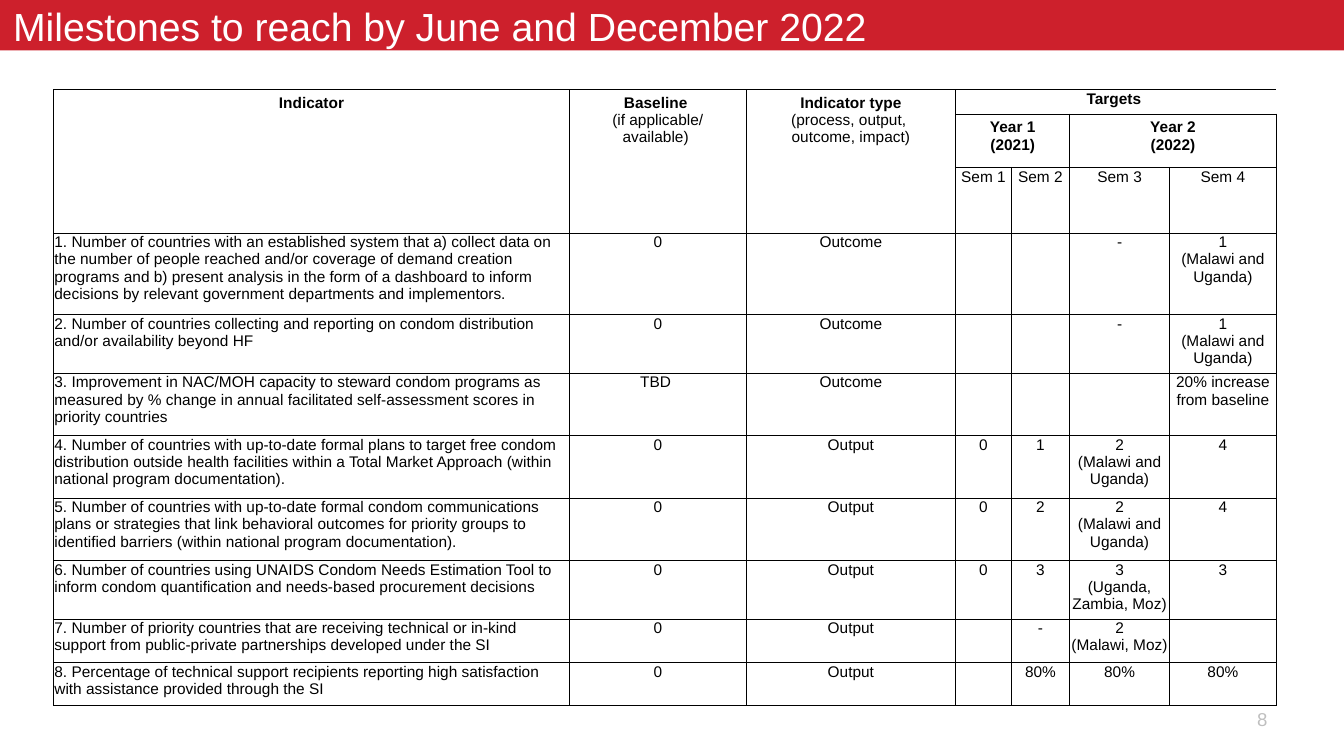
from lxml import etree
from pptx import Presentation
from pptx.dml.color import RGBColor
from pptx.enum import shapes, text
from pptx.oxml import ns
from pptx.util import Inches, Pt

BLACK, WHITE, RED, GREY = "000000", "FFFFFF", "CD202C", "BFBFBF"
LEFT, CENTER, RIGHT = text.PP_ALIGN.LEFT, text.PP_ALIGN.CENTER, text.PP_ALIGN.RIGHT
TIGHT, ROOMY = (0.01, 0.01, 0.01, 0), (0.1, 0.05, 0.1, 0.05)

COLUMN_WIDTHS = [5.12, 1.75, 2.08, 0.55, 0.58, 0.99, 1.06]
ROW_HEIGHTS = [0.24, 0.53, 0.62, 0.81, 0.58, 0.62, 0.62, 0.62, 0.58, 0.43, 0.43]

# Row, column, rows spanned, columns spanned, text, bold lines, insets
# In all texts \n starts a paragraph and \v breaks a line
HEADINGS = [
    (0, 0, 3, 1, "Indicator", 1, ROOMY),
    (0, 1, 3, 1, "Baseline \v(if applicable/\navailable) ", 1, ROOMY),
    (0, 2, 3, 1, "Indicator type\v(process, output, \noutcome, impact)", 1, ROOMY),
    (0, 3, 1, 4, "Targets\u00a0", 1, TIGHT),
    (1, 3, 1, 2, "Year 1\v(2021)", 2, ROOMY),
    (1, 5, 1, 2, "Year 2\v(2022)", 2, ROOMY),
] + [(2, 2 + n, 1, 1, f"Sem {n}", 0, TIGHT) for n in range(1, 5)]

MALAWI_UGANDA = "\n(Malawi and Uganda)"
# Indicator, baseline, type, Sem 1 to Sem 4
INDICATORS = [
    ("Number of countries with an established system that a) collect data on the number of "
     "people reached and/or coverage of demand creation programs and b) present analysis in "
     "the form of a dashboard to inform decisions by relevant government departments and "
     "implementors.", "0", "Outcome", "", "", "-", "1" + MALAWI_UGANDA),
    ("Number of countries collecting and reporting on condom distribution and/or "
     "availability beyond HF", "0", "Outcome", "", "", "-", "1" + MALAWI_UGANDA),
    ("Improvement in NAC/MOH capacity to steward condom programs as measured by % change in "
     "annual facilitated self-assessment scores in priority countries",
     "TBD ", "Outcome", "", "", "", "20% increase from baseline"),
    ("Number of countries with up-to-date formal plans to target free condom distribution "
     "outside health facilities within a Total Market Approach (within national program "
     "documentation).", "0", "Output", "0", "1", "2" + MALAWI_UGANDA, "4"),
    ("Number of countries with up-to-date formal condom communications plans or strategies "
     "that link behavioral outcomes for priority groups to identified barriers (within "
     "national program documentation).",
     "0", "Output", "0", "2", "2" + MALAWI_UGANDA, "4"),
    ("Number of countries using UNAIDS Condom Needs Estimation Tool to inform condom "
     "quantification and needs-based procurement decisions",
     "0", "Output", "0", "3", "3\n(Uganda, Zambia, Moz)", "3"),
    ("Number of priority countries that are receiving technical or in-kind support from "
     "public-private partnerships developed under the SI",
     "0", "Output", "", "-", "2\n(Malawi, Moz)", ""),
    ("Percentage of technical support recipients reporting high satisfaction with "
     "assistance provided through the SI", "0", "Output", "", "80%", "80%", "80%"),
]


def rgb(hex_color):
    return RGBColor.from_string(hex_color)


def write(frame, content, size=11, color=BLACK, align=CENTER, bold_lines=0, spacing=None):
    """Fill a text frame, with the first bold_lines lines in bold."""
    line_number = 0
    for i, block in enumerate(content.split("\n")):
        paragraph = frame.add_paragraph() if i else frame.paragraphs[0]
        paragraph.alignment = align
        paragraph.line_spacing = spacing
        paragraph.font.size = Pt(size)
        for j, line in enumerate(block.split("\v")):
            if j:
                paragraph.add_line_break()
            if line:
                run = paragraph.add_run()
                run.text = line
                run.font.name, run.font.size = "Arial", Pt(size)
                run.font.color.rgb = rgb(color)
                run.font.bold = line_number < bold_lines
            line_number += 1


def add_label(slide, box, content, insets, **fmt):
    frame = slide.shapes.add_textbox(*map(Inches, box)).text_frame
    frame.word_wrap = True
    frame.vertical_anchor = text.MSO_ANCHOR.MIDDLE
    set_insets(frame, insets)
    write(frame, content, **fmt)


def set_insets(holder, insets):
    (holder.margin_left, holder.margin_top,
     holder.margin_right, holder.margin_bottom) = map(Inches, insets)


def add_banner(slide):
    banner = slide.shapes.add_shape(shapes.MSO_SHAPE.RECTANGLE, 0, 0, Inches(13.36), Inches(0.5))
    banner.shadow.inherit = False
    banner.fill.solid()
    banner.fill.fore_color.rgb = rgb(RED)
    banner.line.fill.background()


def set_borders(cell, open_right):
    properties = cell._tc.get_or_add_tcPr()
    for side in "LRTB":
        line = etree.SubElement(properties, ns.qn(f"a:ln{side}"), w=str(Pt(0.5)))
        if side == "R" and open_right:
            etree.SubElement(line, ns.qn("a:noFill"))
        else:
            fill = etree.SubElement(line, ns.qn("a:solidFill"))
            etree.SubElement(fill, ns.qn("a:srgbClr"), val=BLACK)


def add_milestones(slide):
    table = slide.shapes.add_table(
        len(ROW_HEIGHTS), len(COLUMN_WIDTHS), Inches(0.53), Inches(0.89),
        Inches(sum(COLUMN_WIDTHS)), Inches(sum(ROW_HEIGHTS))).table
    table.first_row = table.horz_banding = False
    for column, width in zip(table.columns, COLUMN_WIDTHS):
        column.width = Inches(width)

    # Grid; the Targets heading is open on its right
    for r, height in enumerate(ROW_HEIGHTS):
        table.rows[r].height = Inches(height)
        for c in range(len(COLUMN_WIDTHS)):
            cell = table.cell(r, c)
            set_insets(cell, TIGHT)
            set_borders(cell, open_right=r == 0 and c >= 3)
            cell.fill.background()
            cell.text_frame.paragraphs[0].font.size = Pt(11)

    # Headings
    for r, c, row_span, column_span, heading, bold_lines, insets in HEADINGS:
        cell = table.cell(r, c)
        if row_span * column_span > 1:
            cell.merge(table.cell(r + row_span - 1, c + column_span - 1))
        set_insets(cell, insets)
        write(cell.text_frame, heading, bold_lines=bold_lines)

    # Indicators
    for number, (indicator, *values) in enumerate(INDICATORS, 1):
        r = number + 2
        write(table.cell(r, 0).text_frame, f"{number}. {indicator}", align=LEFT)
        for c, value in enumerate(values, 1):
            write(table.cell(r, c).text_frame, value)


def main():
    deck = Presentation()
    deck.slide_width, deck.slide_height = Inches(13.33), Inches(7.5)
    slide = deck.slides.add_slide(deck.slide_layouts[6])
    add_banner(slide)
    add_label(slide, (0.13, 0, 11.76, 0.62), "Milestones to reach by June and December 2022",
              (0, 0, 0, 0.05), size=28, color=WHITE, align=LEFT, spacing=0.9)
    add_label(slide, (9.56, 6.93, 3.11, 0.4), "8", ROOMY, size=13.3, color=GREY, align=RIGHT)
    add_milestones(slide)
    deck.save("out.pptx")


if __name__ == "__main__":
    main()
